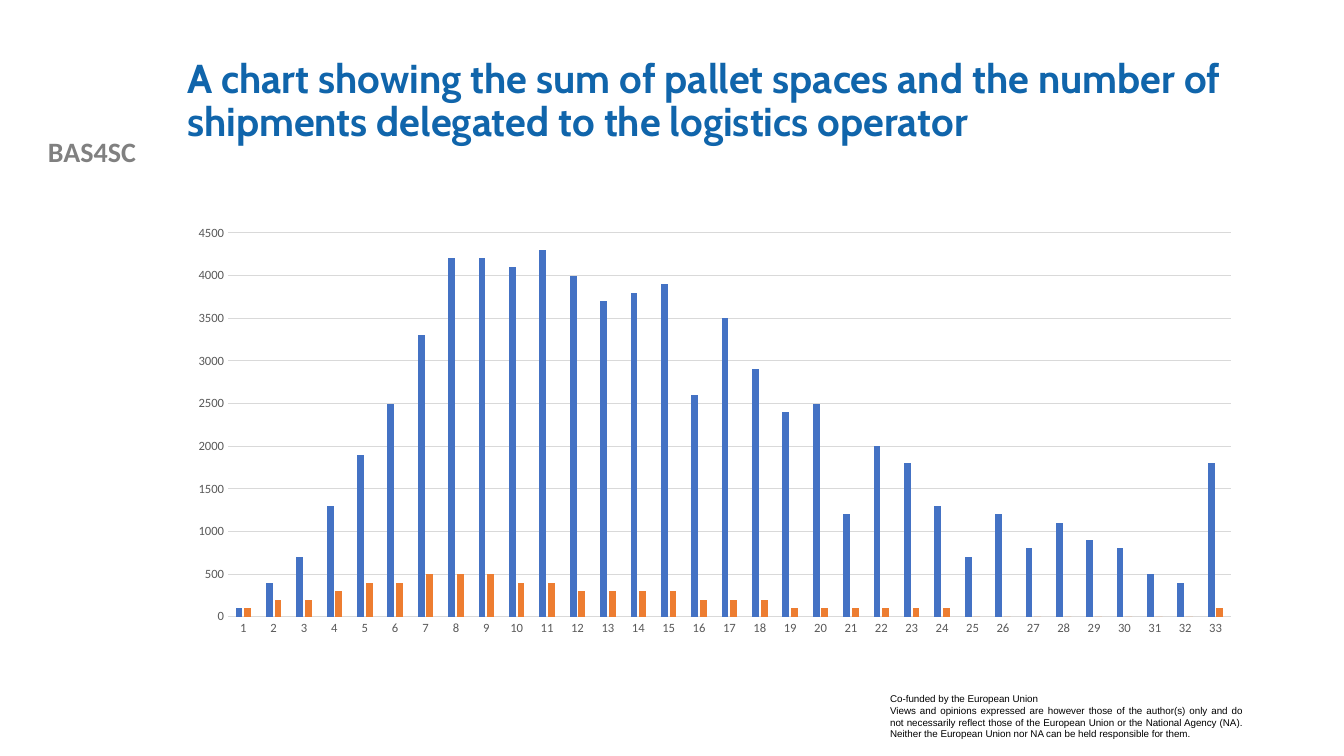
"""Builds the slide charting pallet spaces and shipments delegated to the logistics operator."""
import pptx
import pptx.chart.data
import pptx.dml.color
import pptx.enum.chart
import pptx.enum.shapes
import pptx.enum.text
import pptx.util

RGBColor = pptx.dml.color.RGBColor
ALIGN = pptx.enum.text.PP_ALIGN
ANCHOR = pptx.enum.text.MSO_ANCHOR
TICK = pptx.enum.chart.XL_TICK_MARK

TITLE = "A chart showing the sum of pallet spaces and the number of shipments delegated to the logistics operator"
PROJECT = "BAS4SC"
FUNDING = (
    "Co-funded by the European Union\n"
    "Views and opinions expressed are however those of the author(s) only and do not necessarily "
    "reflect those of the European Union or the National Agency (NA). Neither the European Union "
    "nor NA can be held responsible for them."
)

BLUE = RGBColor(0x44, 0x72, 0xC4)
ORANGE = RGBColor(0xED, 0x7D, 0x31)
TITLE_BLUE = RGBColor(0x10, 0x65, 0xAB)
GREY = RGBColor(0x80, 0x80, 0x80)
AXIS_GREY = RGBColor(0x59, 0x59, 0x59)
GRID_GREY = RGBColor(0xD9, 0xD9, 0xD9)
BLACK = RGBColor(0, 0, 0)
WHITE = RGBColor(0xFF, 0xFF, 0xFF)

SERIES = [
    ("Series 1", BLUE, [
        100, 400, 700, 1300, 1900, 2500, 3300, 4200, 4200, 4100, 4300,
        4000, 3700, 3800, 3900, 2600, 3500, 2900, 2400, 2500, 1200, 2000,
        1800, 1300, 700, 1200, 800, 1100, 900, 800, 500, 400, 1800]),
    ("Series 2", ORANGE, [
        100, 200, 200, 300, 400, 400, 500, 500, 500, 400, 400,
        300, 300, 300, 300, 200, 200, 200, 100, 100, 100, 100,
        100, 100, 0, 0, 0, 0, 0, 0, 0, 0, 100]),
]

PX_PER_INCH = 100.8
TITLE_BOX = (177, 40, 1075, 124)
PROJECT_BOX = (0, 130, 184, 44)
FUNDING_BOX = (880, 688, 372, 57)
CHART_BOX = (177, 217, 1075, 427)


def emu(box):
    return [pptx.util.Inches(length / PX_PER_INCH) for length in box]


def style(font, name, size, color, bold=False):
    font.name = name
    font.size = pptx.util.Pt(size)
    font.bold = bold
    font.color.rgb = color


def write(frame, text, align, anchor, *look):
    frame.word_wrap = True
    frame.auto_size = pptx.enum.text.MSO_AUTO_SIZE.NONE
    frame.vertical_anchor = anchor
    frame.text = text
    for paragraph in frame.paragraphs:
        paragraph.alignment = align
        for run in paragraph.runs:
            style(run.font, *look)


def rule(line):
    line.color.rgb = GRID_GREY
    line.width = pptx.util.Pt(0.75)


def add_shipment_chart(slide):
    data = pptx.chart.data.CategoryChartData()
    data.categories = [str(number + 1) for number in range(len(SERIES[0][2]))]
    for name, _, values in SERIES:
        data.add_series(name, values)
    chart = slide.shapes.add_chart(
        pptx.enum.chart.XL_CHART_TYPE.COLUMN_CLUSTERED, *emu(CHART_BOX), data).chart
    chart.has_title = False
    chart.has_legend = False
    style(chart.font, "Calibri", 10, BLACK)

    columns = chart.plots[0]
    columns.gap_width = 219
    columns.overlap = -27
    columns.vary_by_categories = False
    for series, (_, color, _) in zip(columns.series, SERIES):
        series.format.fill.solid()
        series.format.fill.fore_color.rgb = color
        series.invert_if_negative = False

    for axis in (chart.category_axis, chart.value_axis):
        axis.major_tick_mark = axis.minor_tick_mark = TICK.NONE
        style(axis.tick_labels.font, "Calibri", 9, AXIS_GREY)
    chart.category_axis.has_major_gridlines = False
    rule(chart.category_axis.format.line)
    chart.value_axis.minimum_scale = 0
    chart.value_axis.maximum_scale = 4500
    chart.value_axis.major_unit = 500
    chart.value_axis.has_major_gridlines = True
    rule(chart.value_axis.major_gridlines.format.line)
    chart.value_axis.format.line.fill.background()


def main():
    deck = pptx.Presentation()
    deck.slide_width = pptx.util.Inches(13.33)
    deck.slide_height = pptx.util.Inches(7.5)
    slide = deck.slides.add_slide(deck.slide_layouts[5])

    project = slide.shapes.add_textbox(*emu(PROJECT_BOX))
    write(project.text_frame, PROJECT, ALIGN.CENTER, ANCHOR.TOP, "Calibri", 20, GREY, True)

    funding = slide.shapes.add_shape(pptx.enum.shapes.MSO_SHAPE.RECTANGLE, *emu(FUNDING_BOX))
    funding.shadow.inherit = False
    funding.fill.solid()
    funding.fill.fore_color.rgb = WHITE
    funding.line.fill.background()
    write(funding.text_frame, FUNDING, ALIGN.JUSTIFY, ANCHOR.TOP, "Arial", 7, BLACK)

    title = slide.shapes.title
    title.left, title.top, title.width, title.height = emu(TITLE_BOX)
    write(title.text_frame, TITLE, ALIGN.LEFT, ANCHOR.MIDDLE, "Cabin", 28.8, TITLE_BLUE, True)
    title.text_frame.paragraphs[0].line_spacing = 0.9

    add_shipment_chart(slide)
    deck.save("out.pptx")


if __name__ == "__main__":
    main()
